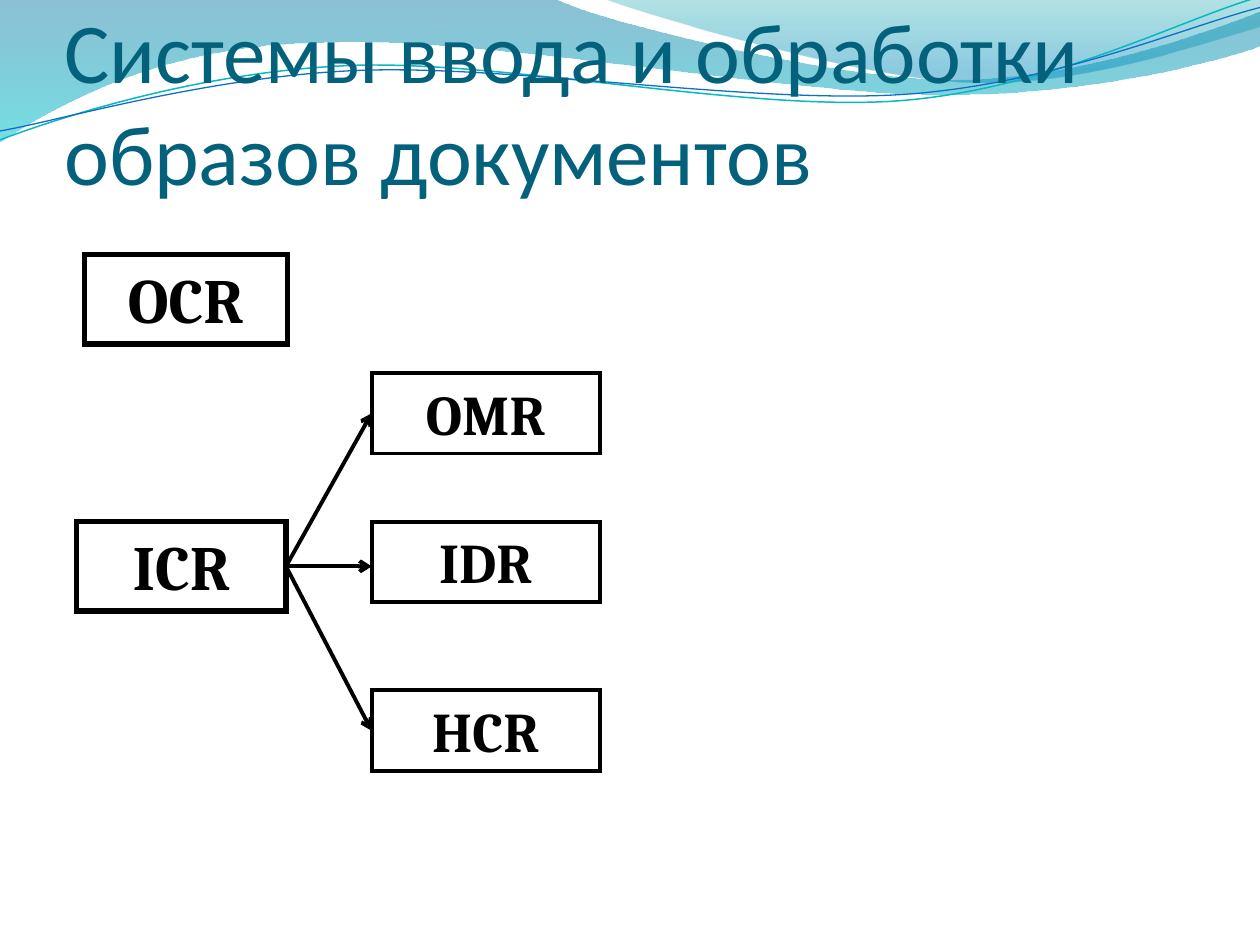
import math
from dataclasses import dataclass

from lxml import etree
from pptx import Presentation
from pptx import util as u
from pptx.dml.color import RGBColor
from pptx.enum import shapes, text
from pptx.oxml.ns import qn


@dataclass(frozen=True)
class Theme:
    ink: str = "000000"
    head: str = "04617B"
    head_font: str = "Calibri"
    box_font: str = "Cambria"
    head_size: float = 48.6
    big: float = 36
    small: float = 32
    thick: float = 3
    thin: float = 2.25


@dataclass(frozen=True)
class Stop:
    pos: float
    color: str
    alpha: int


@dataclass(frozen=True)
class Wave:
    """An outline: two numbers make a line, six make a Bezier curve."""
    start: tuple
    steps: tuple


@dataclass(frozen=True)
class Band:
    wave: Wave
    stops: tuple


@dataclass(frozen=True)
class Strand:
    wave: Wave
    color: str
    width: float
    hub: tuple
    turn: float = 357.3


@dataclass(frozen=True)
class Box:
    name: str
    left: float
    top: float
    width: float
    height: float
    size: float
    line: float


T = Theme()

BANDS = (
    Band(Wave((0, -0.01), (
        (4.4, -0.01), (4.76, 0.17, 6.64, 0.63, 7.58, 0.63),
        (8.53, 0.63, 9.58, 0.26, 10, 0.09), (10.01, 0.36),
        (9.83, 0.44, 8.7, 0.76, 7.46, 0.75), (6.22, 0.75, 3.82, 0.28, 2.57, 0.34),
        (1.29, 0.35, 0.46, 0.83, -0.01, 1.13), (0, -0.01))),
        (Stop(0, "0074A1", 45), Stop(1, "00C6CF", 55))),
    Band(Wave((4.79, -0.01), (
        (5.09, 0.11, 6.82, 0.62, 7.69, 0.65),
        (8.56, 0.69, 9.61, 0.32, 10, 0.21), (10, 0), (4.79, -0.01))),
        (Stop(0, "00A1A9", 30), Stop(0.8, "008BBF", 45))),
)
STRANDS = (
    Strand(Wave((0, 1.11), (
        (0.48, 0.93, 1.58, 0.57, 2.77, 0.52), (3.95, 0.47, 5.93, 0.89, 7.13, 0.8),
        (8.33, 0.71, 9.38, 0.15, 9.98, -0.02))), "0AB8BF", 0.85, (4.99, 0.58)),
    Strand(Wave((0, 1.04), (
        (0.47, 0.96, 1.64, 0.61, 2.83, 0.56), (4.03, 0.51, 5.97, 0.83, 7.17, 0.75),
        (8.36, 0.67, 9.41, 0.21, 10, 0.06))), "0F6FC6", 0.75, (5, 0.59)),
)

OCR = Box("OCR", 0.67, 2.02, 1.61, 0.71, T.big, T.thick)
ICR = Box("ICR", 0.61, 4.14, 1.66, 0.71, T.big, T.thick)
KINDS = tuple(Box(name, 2.95, top, 1.81, 0.64, T.small, T.thin)
              for name, top in (("OMR", 2.96), ("IDR", 4.14), ("HCR", 5.48)))


def rgb(color: str) -> RGBColor:
    return RGBColor.from_string(color)


def spin(point: tuple, hub: tuple, turn: float) -> tuple:
    """Turn a point clockwise about the hub, in degrees."""
    dx, dy = point[0] - hub[0], point[1] - hub[1]
    c, s = math.cos(math.radians(turn)), math.sin(math.radians(turn))
    return hub[0] + dx * c - dy * s, hub[1] + dx * s + dy * c


def add_wave(home, wave: Wave, closed: bool, hub: tuple = (0, 0), turn: float = 0):
    """Lay out all knots as lines, then merge each curve's three into one."""
    flat = [wave.start] + [step[i:i + 2] for step in wave.steps
                           for i in range(0, len(step), 2)]
    pts = [tuple(u.Inches(v) for v in spin(p, hub, -turn)) for p in flat]
    pen = home.build_freeform(*pts[0])
    pen.add_line_segments(pts[1:], close=closed)
    shape = pen.convert_to_shape()
    shape.shadow.inherit = False
    shape.rotation = turn
    lines = iter(list(shape._element.spPr.iter(qn("a:lnTo"))))
    for step in wave.steps:
        group = [next(lines) for _ in range(len(step) // 2)]
        if len(group) == 3:
            curve = etree.Element(qn("a:cubicBezTo"))
            group[0].addprevious(curve)
            for line in group:
                curve.append(line[0])
                line.getparent().remove(line)
    return shape


def add_band(home, band: Band) -> None:
    shape = add_wave(home, band.wave, True)
    shape.line.fill.background()
    shape.fill.gradient()
    shape.fill.gradient_angle = 270
    for mark, stop in zip(shape.fill.gradient_stops, band.stops):
        mark.position = stop.pos
        mark.color.rgb = rgb(stop.color)
    for node, stop in zip(shape._element.spPr.iter(qn("a:srgbClr")), band.stops):
        etree.SubElement(node, qn("a:alpha"), val=str(stop.alpha * 1000))


def add_strand(home, strand: Strand) -> None:
    shape = add_wave(home, strand.wave, False, strand.hub, strand.turn)
    shape.fill.background()
    shape.line.color.rgb = rgb(strand.color)
    shape.line.width = u.Pt(strand.width)


def add_run(para, words: str, font: str, size: float, color: str, bold: bool) -> None:
    run = para.add_run()
    run.text = words
    run.font.name = font
    run.font.size = u.Pt(size)
    run.font.color.rgb = rgb(color)
    run.font.bold = bold


def add_title(slide, words: str) -> None:
    frame = slide.shapes.add_textbox(
        u.Inches(0.51), u.Inches(0.36), u.Inches(9), u.Inches(1.25)).text_frame
    frame.word_wrap = True
    frame.vertical_anchor = text.MSO_ANCHOR.BOTTOM
    frame.margin_left = frame.margin_right = frame.margin_bottom = 0
    frame.margin_top = u.Inches(0.05)
    add_run(frame.paragraphs[0], words, T.head_font, T.head_size, T.head, False)


def add_box(slide, box: Box):
    shape = slide.shapes.add_shape(
        shapes.MSO_SHAPE.RECTANGLE, u.Inches(box.left), u.Inches(box.top),
        u.Inches(box.width), u.Inches(box.height))
    shape.shadow.inherit = False
    shape.fill.background()
    shape.line.color.rgb = rgb(T.ink)
    shape.line.width = u.Pt(box.line)
    etree.SubElement(shape._element.spPr.find(qn("a:ln")), qn("a:miter"), lim="800000")
    frame = shape.text_frame
    frame.word_wrap = True
    frame.auto_size = text.MSO_AUTO_SIZE.SHAPE_TO_FIT_TEXT
    frame.vertical_anchor = text.MSO_ANCHOR.TOP
    para = frame.paragraphs[0]
    para.alignment = text.PP_ALIGN.CENTER
    add_run(para, box.name, T.box_font, box.size, T.ink, True)
    return shape


def add_arrow(slide, start, end) -> None:
    """Join two boxes; a target almost level with the start gets a level arrow."""
    x, y = start.left + start.width, start.top + start.height // 2
    arrow = slide.shapes.add_connector(shapes.MSO_CONNECTOR.STRAIGHT, x, y, end.left, y)
    arrow.begin_connect(start, 3)
    if abs(end.top + end.height // 2 - y) > u.Inches(0.1):
        arrow.end_connect(end, 1)
    arrow.line.color.rgb = rgb(T.ink)
    arrow.line.width = u.Pt(T.thin)
    props = arrow._element.spPr
    etree.SubElement(props.find(qn("a:ln")), qn("a:tailEnd"), type="arrow")
    etree.SubElement(props, qn("a:effectLst"))


def main() -> None:
    deck = Presentation()
    deck.slide_width, deck.slide_height = u.Inches(10), u.Inches(7.5)
    slide = deck.slides.add_slide(deck.slide_layouts[6])
    for band in BANDS:
        add_band(slide.shapes, band)
    group = slide.shapes.add_group_shape()
    for strand in STRANDS:
        add_strand(group.shapes, strand)
    add_title(slide, "Системы ввода и обработки образов документов")
    add_box(slide, OCR)
    root = add_box(slide, ICR)
    for kind in [add_box(slide, box) for box in KINDS]:
        add_arrow(slide, root, kind)
    deck.save("out.pptx")


if __name__ == "__main__":
    main()
